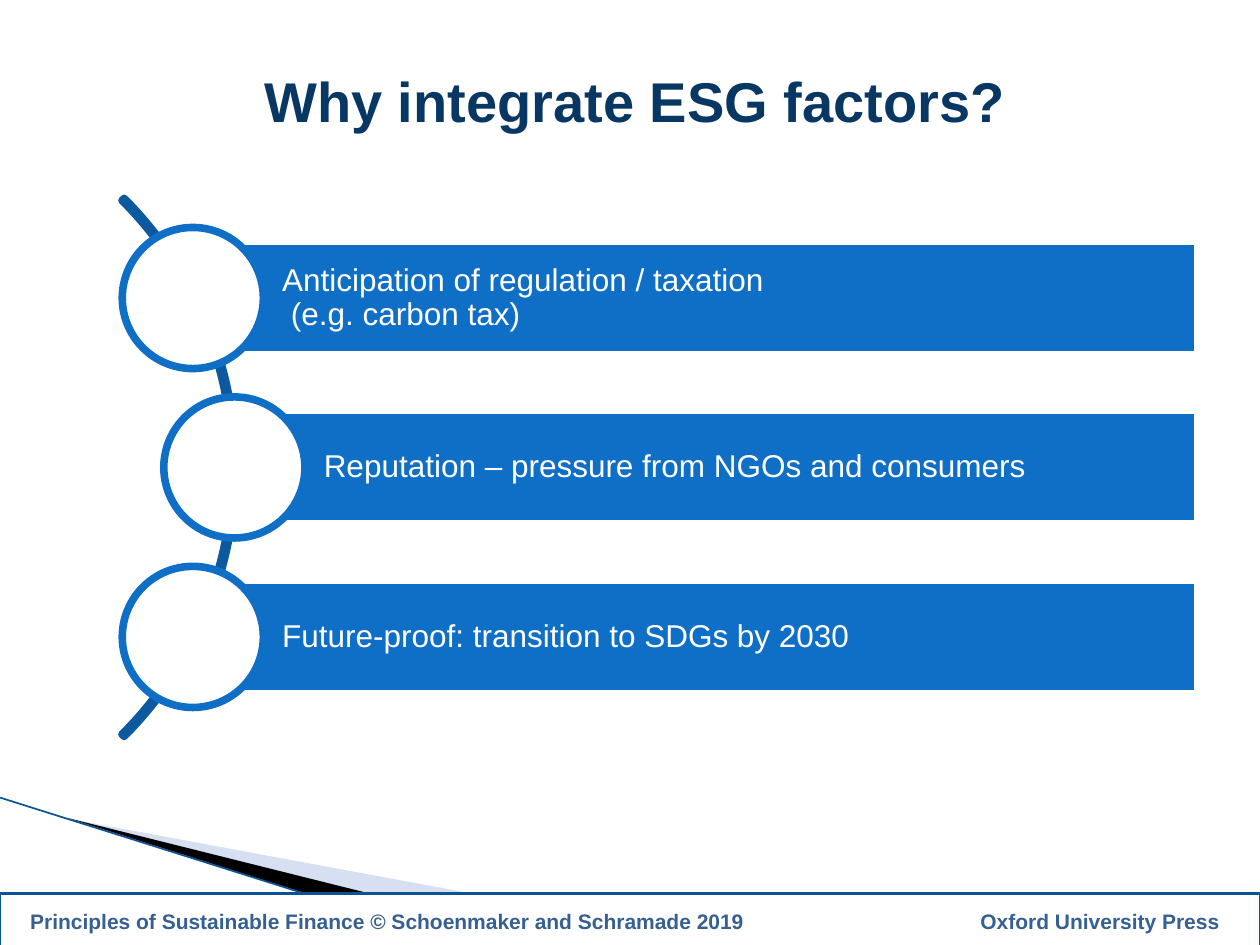
from dataclasses import dataclass

from lxml import etree
from pptx import Presentation
from pptx.dml.color import RGBColor
from pptx.enum.shapes import MSO_CONNECTOR, MSO_SHAPE
from pptx.enum.text import MSO_ANCHOR, PP_ALIGN
from pptx.oxml.ns import qn
from pptx.util import Inches, Pt

RECT, OVAL, ARC = MSO_SHAPE.RECTANGLE, MSO_SHAPE.OVAL, MSO_SHAPE.BLOCK_ARC
STRAIGHT = MSO_CONNECTOR.STRAIGHT
MIDDLE = MSO_ANCHOR.MIDDLE
LEFT, CENTER = PP_ALIGN.LEFT, PP_ALIGN.CENTER

# Content
TITLE = "Why integrate ESG factors?"
REASONS = [
    "Anticipation of regulation / taxation\v (e.g. carbon tax)",
    "Reputation – pressure from NGOs and consumers",
    "Future-proof: transition to SDGs by 2030",
]
FOOTER = ("Principles of Sustainable Finance © Schoenmaker and Schramade 2019"
          "\tOxford University Press")


@dataclass(frozen=True)
class Theme:
    font: str = "Arial"
    white: str = "FFFFFF"
    black: str = "000000"
    bar: str = "0F6FC6"
    arc: str = "0C599F"
    title: str = "083763"
    edge: str = "0B5394"
    footer: str = "376092"
    wedge: str = "9DB2E1"
    title_size: float = 32
    reason_size: float = 18
    footer_size: float = 12
    heavy: float = 4.33
    medium: float = 1.5
    thin: float = 0.95


THEME = Theme()

# Layout, in inches
WIDTH, HEIGHT = 10, 7.5
ARC_X, ARC_Y, ARC_RADIUS = -1.15, 3.71, 3.02
ROW_SPAN = 2.69
BAR_LEFTS, BAR_RIGHT, BAR_HEIGHT = (1.53, 1.86, 1.53), 9.51, 0.9
CIRCLE = 1.12
FOOTER_TOP, FOOTER_HEIGHT = 7.09, 0.44
FOOTER_LEFT, FOOTER_RIGHT = 0.24, 9.68

deck = Presentation()
deck.slide_width, deck.slide_height = Inches(WIDTH), Inches(HEIGHT)
page = deck.slides.add_slide(deck.slide_layouts[6])


def paint(shape, fill=None, line=None, weight=THEME.heavy):
    shape.shadow.inherit = False
    if fill:
        shape.fill.solid()
        shape.fill.fore_color.rgb = RGBColor.from_string(fill)
    else:
        shape.fill.background()
    if line:
        shape.line.color.rgb = RGBColor.from_string(line)
        shape.line.width = Pt(weight)
    else:
        shape.line.fill.background()
    return shape


def add_shape(kind, left, top, width, height, **look):
    place = [Inches(v) for v in (left, top, width, height)]
    return paint(page.shapes.add_shape(kind, *place), **look)


def add_wedge(points, fill, opacity=100):
    corners = [(Inches(x), Inches(y)) for x, y in points]
    builder = page.shapes.build_freeform(*corners[0])
    builder.add_line_segments(corners[1:])
    wedge = paint(builder.convert_to_shape(), fill=fill)
    color = wedge.fill._xPr.find(".//" + qn("a:srgbClr"))
    etree.SubElement(color, qn("a:alpha"), val=str(opacity * 1000))


def write(box, text, size, color, bold=False, align=LEFT,
          insets=(0.1, 0.05, 0.1, 0.05), spacing=None, right_tab=None):
    frame = box.text_frame
    frame.word_wrap = True
    frame.vertical_anchor = MIDDLE
    (frame.margin_left, frame.margin_top,
     frame.margin_right, frame.margin_bottom) = [Inches(v) for v in insets]
    para = frame.paragraphs[0]
    para.text = text
    para.alignment = align
    if spacing:
        para.line_spacing = spacing
    if right_tab:
        tabs = etree.SubElement(para._p.get_or_add_pPr(), qn("a:tabLst"))
        etree.SubElement(tabs, qn("a:tab"), pos=str(Inches(right_tab)), algn="r")
    for span in para.runs:
        span.font.name = THEME.font
        span.font.size = Pt(size)
        span.font.bold = bold
        span.font.color.rgb = RGBColor.from_string(color)


# Corner decoration
add_wedge([(0.55, 6.5), (5.95, HEIGHT), (4.56, HEIGHT)], THEME.wedge, opacity=40)
add_wedge([(0.53, 6.49), (4.57, HEIGHT), (3.72, HEIGHT)], THEME.black)
slope = page.shapes.add_connector(
    STRAIGHT, 0, Inches(6.33), Inches(3.71), Inches(HEIGHT))
slope.line.color.rgb = RGBColor.from_string(THEME.edge)
slope.line.width = Pt(THEME.thin)
etree.SubElement(slope._element.spPr, qn("a:effectLst"))

# Arc behind the reasons
arc = add_shape(ARC, ARC_X - ARC_RADIUS, ARC_Y - ARC_RADIUS,
                2 * ARC_RADIUS, 2 * ARC_RADIUS, line=THEME.arc)
for index, value in enumerate((189, 27, 0.004)):
    arc.adjustments[index] = value

# Reasons: a bar with a circle centred on its left end
pitch = ROW_SPAN / (len(REASONS) - 1)
for row, (reason, left) in enumerate(zip(REASONS, BAR_LEFTS)):
    middle = ARC_Y - ROW_SPAN / 2 + row * pitch
    bar = add_shape(RECT, left, middle - BAR_HEIGHT / 2, BAR_RIGHT - left,
                    BAR_HEIGHT, fill=THEME.bar, line=THEME.white)
    write(bar, reason, THEME.reason_size, THEME.white,
          insets=(0.71, 0.05, 0.05, 0.05), spacing=0.9)
    add_shape(OVAL, left - CIRCLE / 2, middle - CIRCLE / 2, CIRCLE, CIRCLE,
              fill=THEME.white, line=THEME.bar)

# Title
title = page.shapes.add_textbox(*[Inches(v) for v in (0.75, 0.44, 8.58, 0.71)])
write(title, TITLE, THEME.title_size, THEME.title, bold=True, align=CENTER)

# Footer
footer = add_shape(RECT, 0, FOOTER_TOP, WIDTH, FOOTER_HEIGHT, fill=THEME.white,
                   line=THEME.edge, weight=THEME.medium)
write(footer, FOOTER, THEME.footer_size, THEME.footer, bold=True,
      insets=(FOOTER_LEFT, 0.05, 0.1, 0.05),
      right_tab=FOOTER_RIGHT - FOOTER_LEFT)

deck.save("out.pptx")
